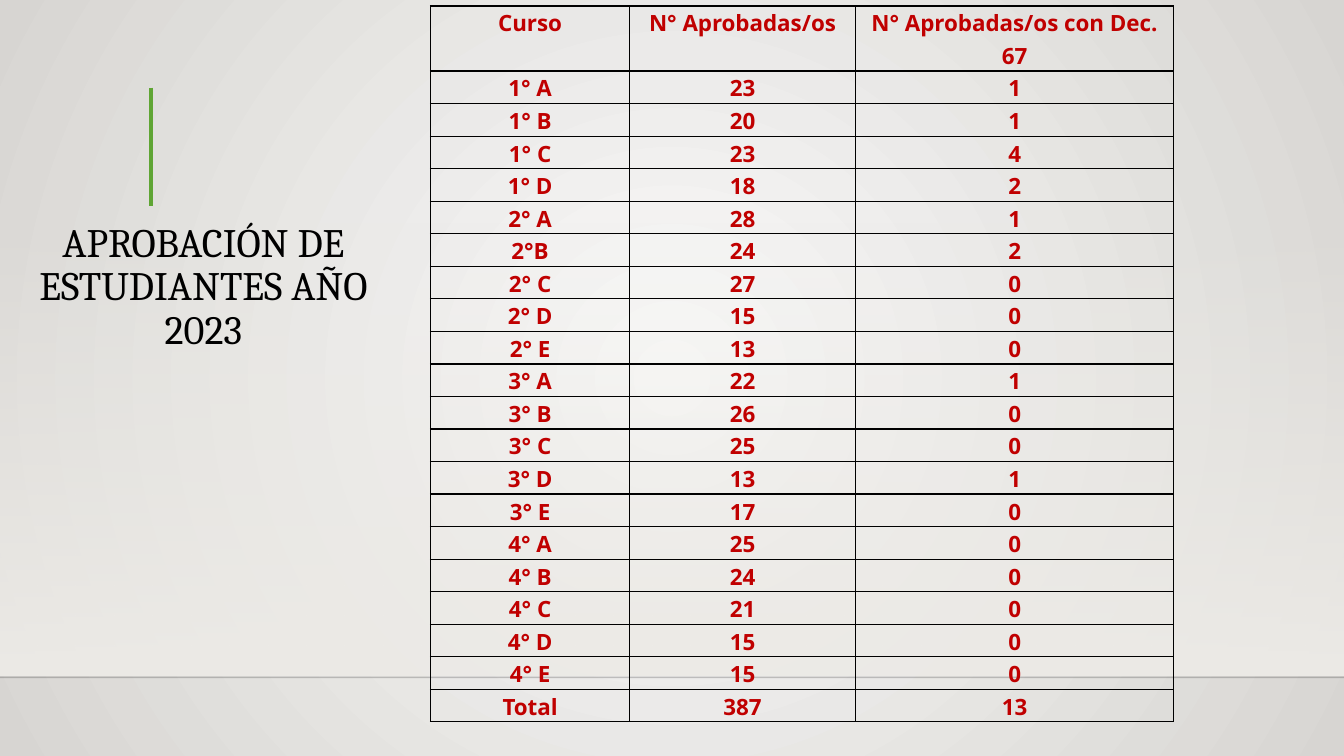
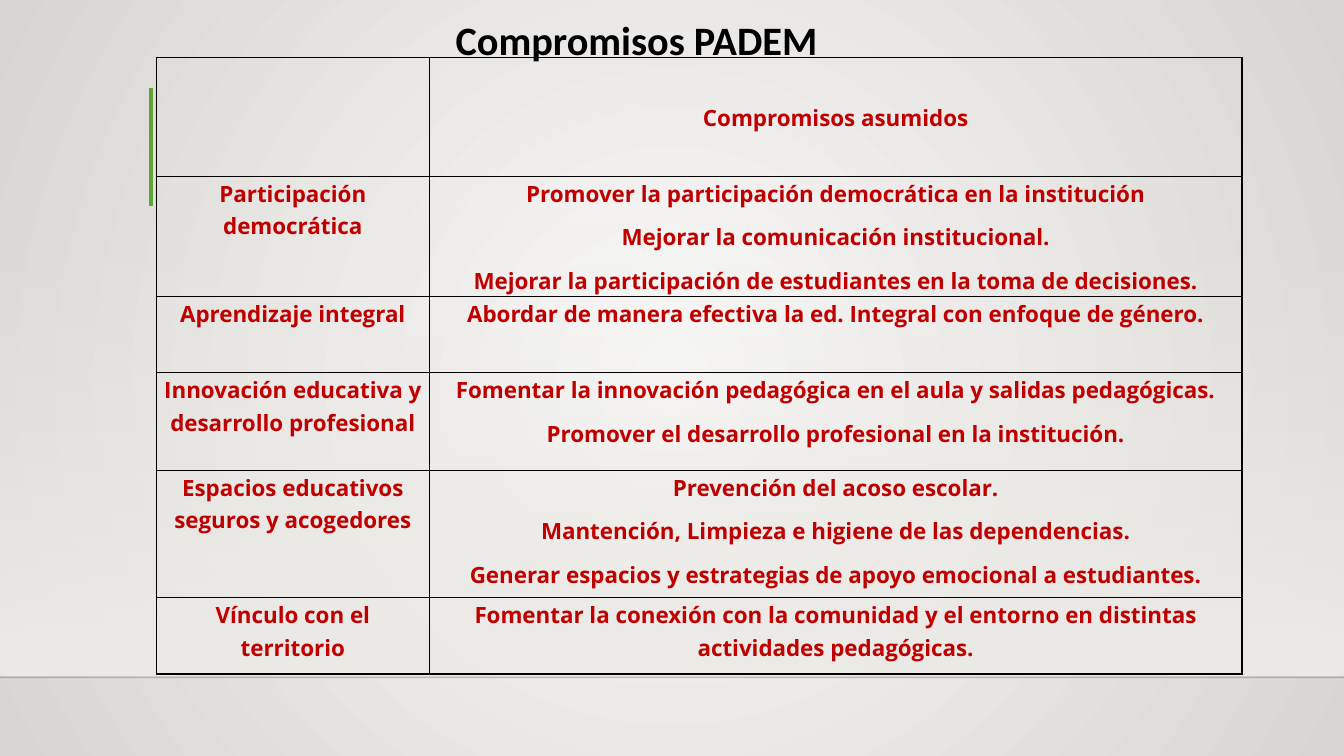
from lxml.etree import SubElement
from pptx import Presentation
from pptx.dml.color import RGBColor
from pptx.enum.shapes import MSO_CONNECTOR, MSO_SHAPE
from pptx.enum.text import MSO_ANCHOR, PP_ALIGN
from pptx.oxml import parse_xml
from pptx.oxml.ns import nsdecls, qn
from pptx.util import Cm, Pt

SLIDE_W, SLIDE_H = 33.87, 19.05
COLORS = {
    "center": "FAFAF9",
    "edge": "D7D5D2",
    "band": "EDEBE7",
    "floor": "000001",
    "accent": "5FA534",
    "title": "000000",
    "border": "000000",
    "cell": "C00000",
}
TITLE_SIZE, CELL_SIZE = 28.8, 16
CELL_FONT = "Open Sans"
LINE_SPACING, PARAGRAPH_GAP = 1.07, 8

APPROVALS = [
    ("Curso", "N° Aprobadas/os", "N° Aprobadas/os con Dec. 67"),
    ("1° A", "23", "1"),
    ("1° B", "20", "1"),
    ("1° C", "23", "4"),
    ("1° D", "18", "2"),
    ("2° A", "28", "1"),
    ("2°B", "24", "2"),
    ("2° C", "27", "0"),
    ("2° D", "15", "0"),
    ("2° E", "13", "0"),
    ("3° A", "22", "1"),
    ("3° B", "26", "0"),
    ("3° C", "25", "0"),
    ("3° D", "13", "1"),
    ("3° E", "17", "0"),
    ("4° A", "25", "0"),
    ("4° B", "24", "0"),
    ("4° C", "21", "0"),
    ("4° D", "15", "0"),
    ("4° E", "15", "0"),
    ("Total", "387", "13"),
]
COMMITMENTS = [
    ("", "Compromisos asumidos"),
    ("Participación democrática",
     "Promover la participación democrática en la institución\n"
     "Mejorar la comunicación institucional.\n"
     "Mejorar la participación de estudiantes en la toma de decisiones."),
    ("Aprendizaje integral",
     "Abordar de manera efectiva la ed. Integral con enfoque de género."),
    ("Innovación educativa y desarrollo profesional",
     "Fomentar la innovación pedagógica en el aula y salidas pedagógicas.\n"
     "Promover el desarrollo profesional en la institución."),
    ("Espacios educativos seguros y acogedores",
     "Prevención del acoso escolar.\n"
     "Mantención, Limpieza e higiene de las dependencias.\n"
     "Generar espacios y estrategias de apoyo emocional a estudiantes."),
    ("Vínculo con el territorio",
     "Fomentar la conexión con la comunidad y el entorno en distintas "
     "actividades pedagógicas."),
]


def rgb(key):
    return RGBColor.from_string(COLORS[key])


def set_gradient(fill, first, last):
    fill.gradient()
    for stop, key in zip(fill.gradient_stops, (first, last)):
        stop.color.rgb = rgb(key)


def set_alpha(element, percent):
    """Make the first colour of the element translucent."""
    color = element.find(".//" + qn("a:srgbClr"))
    SubElement(color, qn("a:alpha"), val=str(percent * 1000))


def add_rule(shapes, start, end, key, width):
    rule = shapes.add_connector(MSO_CONNECTOR.STRAIGHT, *map(Cm, start + end))
    rule.line.color.rgb = rgb(key)
    rule.line.width = Pt(width)
    SubElement(rule.element.spPr, qn("a:effectLst"))
    return rule


def paint_background(master):
    set_gradient(master.background.fill, "center", "edge")
    gradient = master.element.find(".//" + qn("a:gradFill"))
    gradient.replace(gradient.find(qn("a:lin")), parse_xml(
        f'<a:path {nsdecls("a")} path="circle">'
        '<a:fillToRect l="50000" t="50000" r="50000" b="50000"/></a:path>'))


def decorate_layout(layout, slide):
    """Draw the shared decoration on a slide, then move it to its layout."""
    shapes = slide.shapes
    # Wall band fading in downwards
    band = shapes.add_shape(
        MSO_SHAPE.RECTANGLE, 0, Cm(5.59), Cm(SLIDE_W), Cm(11.43))
    band.shadow.inherit = False
    band.line.fill.background()
    set_gradient(band.fill, "band", "band")
    band.fill.gradient_angle = 270
    set_alpha(band.element, 0)
    # Floor line and accent bar
    floor = add_rule(shapes, (0, 17.07), (SLIDE_W, 17.07), "floor", 1)
    set_alpha(floor.element, 20)
    accent = add_rule(shapes, (3.81, 2.21), (3.81, 5.18), "accent", 3)

    for offset, part in enumerate((band, floor, accent)):
        part.element.find(".//" + qn("p:cNvPr")).set("id", str(100 + offset))
        layout.shapes.element.insert(2 + offset, part.element)


def set_title(slide, text, box, font, align, bold=False, spacing=0.9, indent=0.25):
    title = slide.shapes.title
    title.left, title.top, title.width, title.height = map(Cm, box)
    frame = title.text_frame
    frame.text = text
    frame.vertical_anchor = MSO_ANCHOR.BOTTOM
    frame.margin_left = Cm(indent)
    paragraph = frame.paragraphs[0]
    paragraph.alignment = align
    paragraph.line_spacing = spacing
    run_font = paragraph.runs[0].font
    run_font.name, run_font.size, run_font.bold = font, Pt(TITLE_SIZE), bold
    run_font.color.rgb = rgb("title")


def format_cell(cell, text):
    cell.margin_left = cell.margin_right = Cm(0.18)
    cell.margin_top = cell.margin_bottom = 0
    cell.fill.background()
    # Borders go before the fill
    properties = cell._tc.get_or_add_tcPr()
    for index, side in enumerate(("lnL", "lnR", "lnT", "lnB")):
        properties.insert(index, parse_xml(
            f'<a:{side} {nsdecls("a")} w="{Pt(1)}"><a:solidFill>'
            f'<a:srgbClr val="{COLORS["border"]}"/></a:solidFill></a:{side}>'))
    cell.text_frame.text = text
    paragraphs = cell.text_frame.paragraphs
    for paragraph in paragraphs:
        paragraph.alignment = PP_ALIGN.CENTER
        paragraph.line_spacing = LINE_SPACING
        paragraph.space_after = Pt(PARAGRAPH_GAP)
        for run in paragraph.runs:
            run.font.name, run.font.size = CELL_FONT, Pt(CELL_SIZE)
            run.font.bold = True
            run.font.color.rgb = rgb("cell")


def add_grid(slide, left, top, widths, heights, rows):
    table = slide.shapes.add_table(
        len(rows), len(widths), Cm(left), Cm(top),
        Cm(sum(widths)), Cm(sum(heights))).table
    table.first_row = table.horz_banding = False
    for column, width in zip(table.columns, widths):
        column.width = Cm(width)
    for row, height, texts in zip(table.rows, heights, rows):
        row.height = Cm(height)
        for cell, text in zip(row.cells, texts):
            format_cell(cell, text)
    return table


def fill_approvals(slide):
    set_title(slide, "APROBACIÓN DE ESTUDIANTES AÑO 2023",
              (0, 5.36, 10.26, 3.66), "Cambria", PP_ALIGN.CENTER)
    heights = [1.64] + [0.82] * (len(APPROVALS) - 1)
    add_grid(slide, 10.85, 0.15, (5.02, 5.69, 8.02), heights, APPROVALS)


def fill_commitments(slide):
    set_title(slide, "Compromisos PADEM", (7.42, 0, 26.44, 1.72), "Calibri",
              PP_ALIGN.LEFT, bold=True, spacing=LINE_SPACING, indent=4.06)
    table = add_grid(slide, 3.94, 1.45, (6.88, 20.48),
                     (2.99, 3.02, 1.93, 2.46, 3.21, 1.92), COMMITMENTS)
    table.cell(0, 1).vertical_anchor = MSO_ANCHOR.MIDDLE


def main():
    deck = Presentation()
    deck.slide_width, deck.slide_height = Cm(SLIDE_W), Cm(SLIDE_H)
    layout = deck.slide_layouts.get_by_name("Title Only")
    paint_background(deck.slide_master)
    approvals, commitments = (deck.slides.add_slide(layout) for _ in range(2))
    decorate_layout(layout, approvals)
    fill_approvals(approvals)
    fill_commitments(commitments)
    deck.save("out.pptx")


if __name__ == "__main__":
    main()
